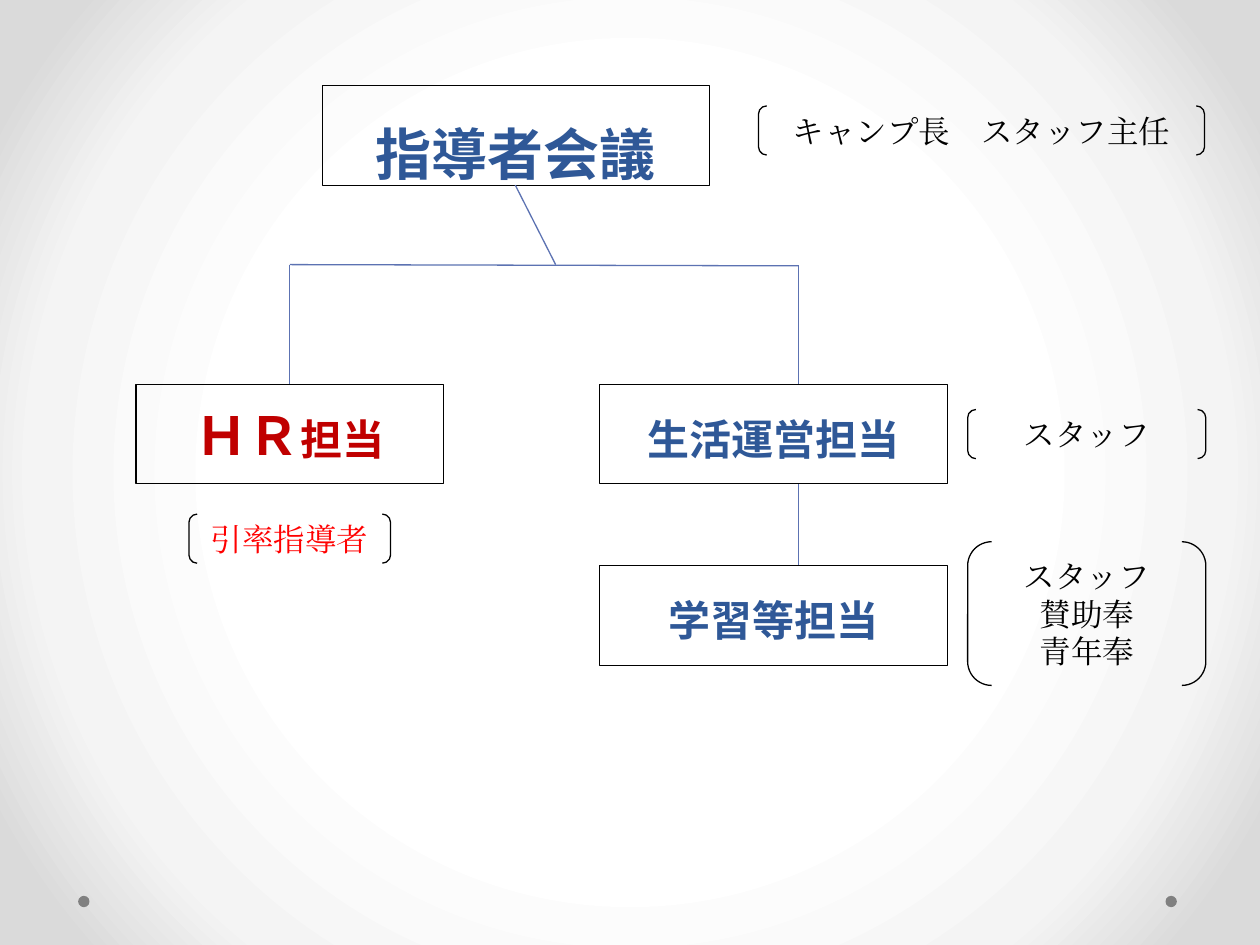
from lxml import etree
from pptx import Presentation
from pptx.dml.color import RGBColor
from pptx.enum.shapes import MSO_CONNECTOR, MSO_SHAPE
from pptx.enum.text import MSO_ANCHOR, PP_ALIGN
from pptx.oxml.ns import qn
from pptx.util import Inches, Pt

RECT, BRACKETS, DOT = MSO_SHAPE.RECTANGLE, MSO_SHAPE.DOUBLE_BRACKET, MSO_SHAPE.OVAL
STRAIGHT = MSO_CONNECTOR.STRAIGHT
CENTER, MIDDLE = PP_ALIGN.CENTER, MSO_ANCHOR.MIDDLE

BLACK = RGBColor(0, 0, 0)
BLUE = RGBColor(0x2F, 0x58, 0x97)
DARK_RED = RGBColor(0xC0, 0, 0)
RED = RGBColor(0xFF, 0, 0)
LINE_BLUE = RGBColor(0x5C, 0x72, 0xB2)
GREY = RGBColor(0x80, 0x80, 0x80)
BACKGROUND_STOPS = [(50, "FFFFFF"), (76, "F4F4F4"), (92, "DADADA")]

BOX_FONT, MEMBER_FONT = "Noto Sans CJK JP", "TeX Gyre Pagella"
LINE_WIDTH = Pt(0.75)

# Columns and rows of the chart, in inches
BOX_H, MEMBER_H = 0.79, 0.39
HR_X, STAFF_X, MEMBER_X = 1.08, 4.76, 7.68
STAFF_W, MEMBER_W = 2.76, 1.89
TOP_Y, ROLE_Y, STUDY_Y = 0.68, 3.05, 4.49
BRANCH_LEFT, BRANCH_RIGHT, BRANCH_Y = 2.3, 6.34, 2.1

# text, left, top, width, colour, size
COUNCIL = ("指導者会議", 2.56, TOP_Y, 3.07, BLUE, 32)
ROLES = [
    ("学習等担当", STAFF_X, STUDY_Y, STAFF_W, BLUE, 30),
    ("生活運営担当", STAFF_X, ROLE_Y, STAFF_W, BLUE, 30),
    ("ＨＲ担当", HR_X, ROLE_Y, 2.44, DARK_RED, 30),
]

# text, left, top, width, height, colour
MEMBERS = [
    ("キャンプ長　スタッフ主任", 6.02, 0.84, 3.54, MEMBER_H, BLACK),
    ("引率指導者", 1.5, 4.08, 1.6, MEMBER_H, RED),
    ("スタッフ", MEMBER_X, 3.25, MEMBER_W, MEMBER_H, BLACK),
    ("スタッフ\n賛助奉\n青年奉", MEMBER_X, 4.3, MEMBER_W, 1.14, BLACK),
]

# start, end
LINKS = [
    ((BRANCH_LEFT, BRANCH_Y), (BRANCH_RIGHT, BRANCH_Y + 0.01)),
    ((4.09, TOP_Y + BOX_H), (4.41, BRANCH_Y)),
    ((BRANCH_LEFT, ROLE_Y), (BRANCH_LEFT, BRANCH_Y)),
    ((BRANCH_RIGHT, ROLE_Y), (BRANCH_RIGHT, BRANCH_Y)),
    ((BRANCH_RIGHT, STUDY_Y), (BRANCH_RIGHT, ROLE_Y + BOX_H)),
]

DOT_SIZE, DOT_Y = 0.09, 7.11
DOT_LEFTS = [0.62, 9.25]


def paint_background(slide):
    """Fill the slide with a gradient that spreads from its centre."""
    slide.background.fill.gradient()
    gradient = slide.background._cSld.find(".//" + qn("a:gradFill"))
    for child in list(gradient):
        gradient.remove(child)
    stops = etree.SubElement(gradient, qn("a:gsLst"))
    for share, colour in BACKGROUND_STOPS:
        stop = etree.SubElement(stops, qn("a:gs"), pos=str(share * 1000))
        etree.SubElement(stop, qn("a:srgbClr"), val=colour)
    circle = etree.SubElement(gradient, qn("a:path"), {"path": "circle"})
    etree.SubElement(circle, qn("a:fillToRect"),
                     {side: "50000" for side in "ltrb"})


def add_outline(slide, kind, left, top, width, height):
    shape = slide.shapes.add_shape(kind, *map(Inches, (left, top, width, height)))
    shape.shadow.inherit = False
    shape.fill.background()
    shape.line.color.rgb = BLACK
    shape.line.width = LINE_WIDTH
    return shape


def write(shape, text, font, size, colour, bold=False, small_caps=False):
    frame = shape.text_frame
    frame.margin_left = frame.margin_right = 0
    frame.margin_top = frame.margin_bottom = 0
    frame.vertical_anchor = MIDDLE
    frame.text = text
    for paragraph in frame.paragraphs:
        paragraph.alignment = CENTER
        for run in paragraph.runs:
            run.font.name = font
            run.font.size = Pt(size)
            run.font.bold = bold
            run.font.color.rgb = colour
            properties = run.font._element
            etree.SubElement(properties, qn("a:ea"), typeface=font)
            if small_caps:
                properties.set("cap", "small")


def add_box(slide, text, left, top, width, colour, size, small_caps=True):
    box = add_outline(slide, RECT, left, top, width, BOX_H)
    write(box, text, BOX_FONT, size, colour, True, small_caps)
    return box


def add_link(slide, start, end):
    link = slide.shapes.add_connector(STRAIGHT, *map(Inches, start + end))
    link.line.color.rgb = LINE_BLUE
    link.line.width = LINE_WIDTH
    etree.SubElement(link._element.spPr, qn("a:effectLst"))


def add_dot(slide, left):
    dot = slide.shapes.add_shape(
        DOT, *map(Inches, (left, DOT_Y, DOT_SIZE, DOT_SIZE)))
    dot.shadow.inherit = False
    dot.fill.solid()
    dot.fill.fore_color.rgb = GREY
    dot.line.fill.background()


def main():
    deck = Presentation()
    deck.slide_width, deck.slide_height = Inches(10), Inches(7.5)
    slide = deck.slides.add_slide(deck.slide_layouts[6])
    paint_background(slide)
    for left in DOT_LEFTS:
        add_dot(slide, left)
    council = add_box(slide, *COUNCIL, small_caps=False)
    council.text_frame.paragraphs[0].line_spacing = Pt(58)
    for link in LINKS:
        add_link(slide, *link)
    for role in ROLES:
        add_box(slide, *role)
    for text, left, top, width, height, colour in MEMBERS:
        brackets = add_outline(slide, BRACKETS, left, top, width, height)
        write(brackets, text, MEMBER_FONT, 18, colour)
    deck.save("out.pptx")


if __name__ == "__main__":
    main()
